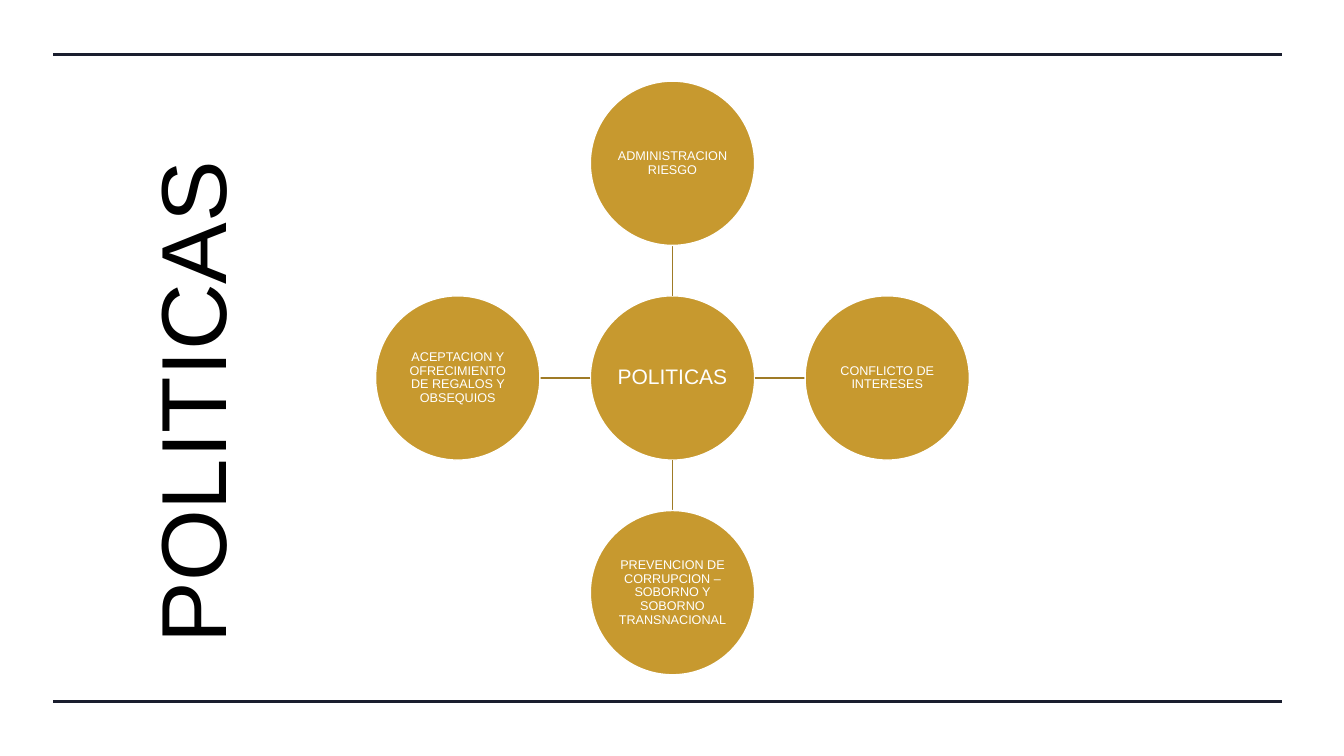
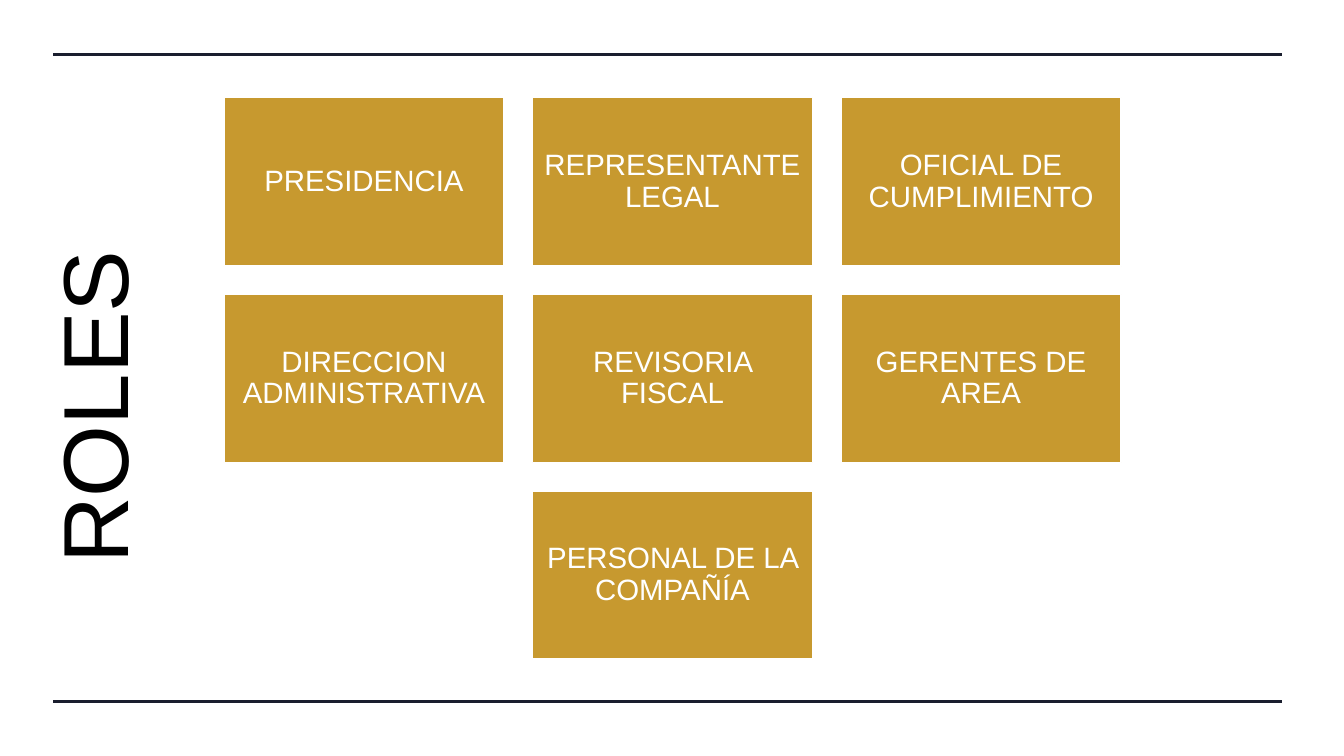
from dataclasses import dataclass

from lxml.etree import SubElement
from pptx import Presentation
from pptx.dml.color import RGBColor
from pptx.enum.shapes import MSO_CONNECTOR as Connector, MSO_SHAPE as Shape
from pptx.enum.text import MSO_ANCHOR as Anchor, PP_ALIGN as Align
from pptx.oxml.ns import qn
from pptx.util import Inches, Pt


@dataclass(frozen=True)
class Theme:
    font: str = "Arial"
    gold: str = "C7992F"
    dark_gold: str = "9F7B26"
    navy: str = "1A1E2E"
    white: str = "FFFFFF"
    black: str = "000000"
    title_size: float = 66
    card_size: float = 21
    hub_size: float = 15
    circle_size: float = 9
    rule_width: float = 2.25
    thin_width: float = 1


THEME = Theme()
CENTER_X, CENTER_Y = 6.67, 3.75


def write(shape, text, *, size, color, inset, anchor=Anchor.MIDDLE, spacing=1.0):
    frame = shape.text_frame
    frame.word_wrap = True
    frame.vertical_anchor = anchor
    frame.margin_left = frame.margin_right = Inches(inset)
    frame.margin_top = frame.margin_bottom = Inches(inset)
    paragraph = frame.paragraphs[0]
    paragraph.alignment = Align.CENTER
    paragraph.line_spacing = spacing
    run = paragraph.add_run()
    run.text = text
    run.font.name = THEME.font
    run.font.size = Pt(size)
    run.font.color.rgb = RGBColor.from_string(color)


class Deck:
    """Holds the presentation and the slide being drawn."""

    def __init__(self):
        self.presentation = Presentation()
        self.presentation.slide_width = Inches(13.33)
        self.presentation.slide_height = Inches(7.5)
        self.slide = None

    def new_slide(self, title, title_left, title_middle):
        """Start a slide with its two rules and a title that reads upwards."""
        blank = self.presentation.slide_layouts[6]
        self.slide = self.presentation.slides.add_slide(blank)
        for y in (0.54, 6.96):
            self.line((0.53, y), (12.72, y), THEME.navy, THEME.rule_width)
        length, depth = 6, 1.2
        box = self.slide.shapes.add_textbox(
            Inches(title_left + (depth - length) / 2),
            Inches(title_middle - depth / 2),
            Inches(length), Inches(depth))
        box.rotation = 270
        write(box, title, size=THEME.title_size, color=THEME.black,
              inset=0.05, anchor=Anchor.TOP)

    def line(self, start, end, color, width):
        connector = self.slide.shapes.add_connector(
            Connector.STRAIGHT, *(Inches(value) for value in (*start, *end)))
        connector.line.color.rgb = RGBColor.from_string(color)
        connector.line.width = Pt(width)
        SubElement(connector._element.spPr, qn("a:effectLst"))

    def node(self, kind, text, left, top, width, height, *, size, inset):
        """Add a gold shape with white text."""
        shape = self.slide.shapes.add_shape(
            kind, Inches(left), Inches(top), Inches(width), Inches(height))
        shape.shadow.inherit = False
        shape.fill.solid()
        shape.fill.fore_color.rgb = RGBColor.from_string(THEME.gold)
        shape.line.color.rgb = RGBColor.from_string(THEME.white)
        shape.line.width = Pt(THEME.thin_width)
        write(shape, text, size=size, color=THEME.white, inset=inset, spacing=0.9)

    def circle(self, text, x, y, diameter, size):
        self.node(Shape.OVAL, text, x - diameter / 2, y - diameter / 2,
                  diameter, diameter, size=size, inset=0.01)

    def card(self, text, left, top, width, height):
        self.node(Shape.RECTANGLE, text, left, top, width, height,
                  size=THEME.card_size, inset=0.09)


def policies_slide(deck):
    deck.new_slide("POLITICAS", title_left=1.28, title_middle=3.99)
    diameter, pitch = 1.63, 2.13
    radius = diameter / 2
    policies = [
        ("ADMINISTRACION RIESGO", 0, -1),
        ("CONFLICTO DE INTERESES", 1, 0),
        ("PREVENCION DE CORRUPCION – SOBORNO Y SOBORNO TRANSNACIONAL", 0, 1),
        ("ACEPTACION Y OFRECIMIENTO DE REGALOS Y OBSEQUIOS", -1, 0),
    ]
    deck.circle("POLITICAS", CENTER_X, CENTER_Y, diameter, THEME.hub_size)
    for text, dx, dy in policies:
        start, end = ((CENTER_X + dx * reach, CENTER_Y + dy * reach)
                      for reach in (radius, pitch - radius))
        deck.line(start, end, THEME.dark_gold, THEME.thin_width)
        deck.circle(text, CENTER_X + dx * pitch, CENTER_Y + dy * pitch,
                    diameter, THEME.circle_size)


def roles_slide(deck):
    deck.new_slide("ROLES", title_left=0.31, title_middle=4.04)
    width, height, gap, top = 2.78, 1.67, 0.28, 0.97
    rows = [
        ["PRESIDENCIA", "REPRESENTANTE LEGAL", "OFICIAL DE CUMPLIMIENTO"],
        ["DIRECCION ADMINISTRATIVA", "REVISORIA FISCAL", "GERENTES DE AREA"],
        ["PERSONAL DE LA COMPAÑÍA"],
    ]
    for row, roles in enumerate(rows):
        row_width = len(roles) * (width + gap) - gap
        left = CENTER_X - row_width / 2
        for column, role in enumerate(roles):
            deck.card(role, left + column * (width + gap),
                      top + row * (height + gap), width, height)


def main():
    deck = Deck()
    policies_slide(deck)
    roles_slide(deck)
    deck.presentation.save("out.pptx")


if __name__ == "__main__":
    main()
